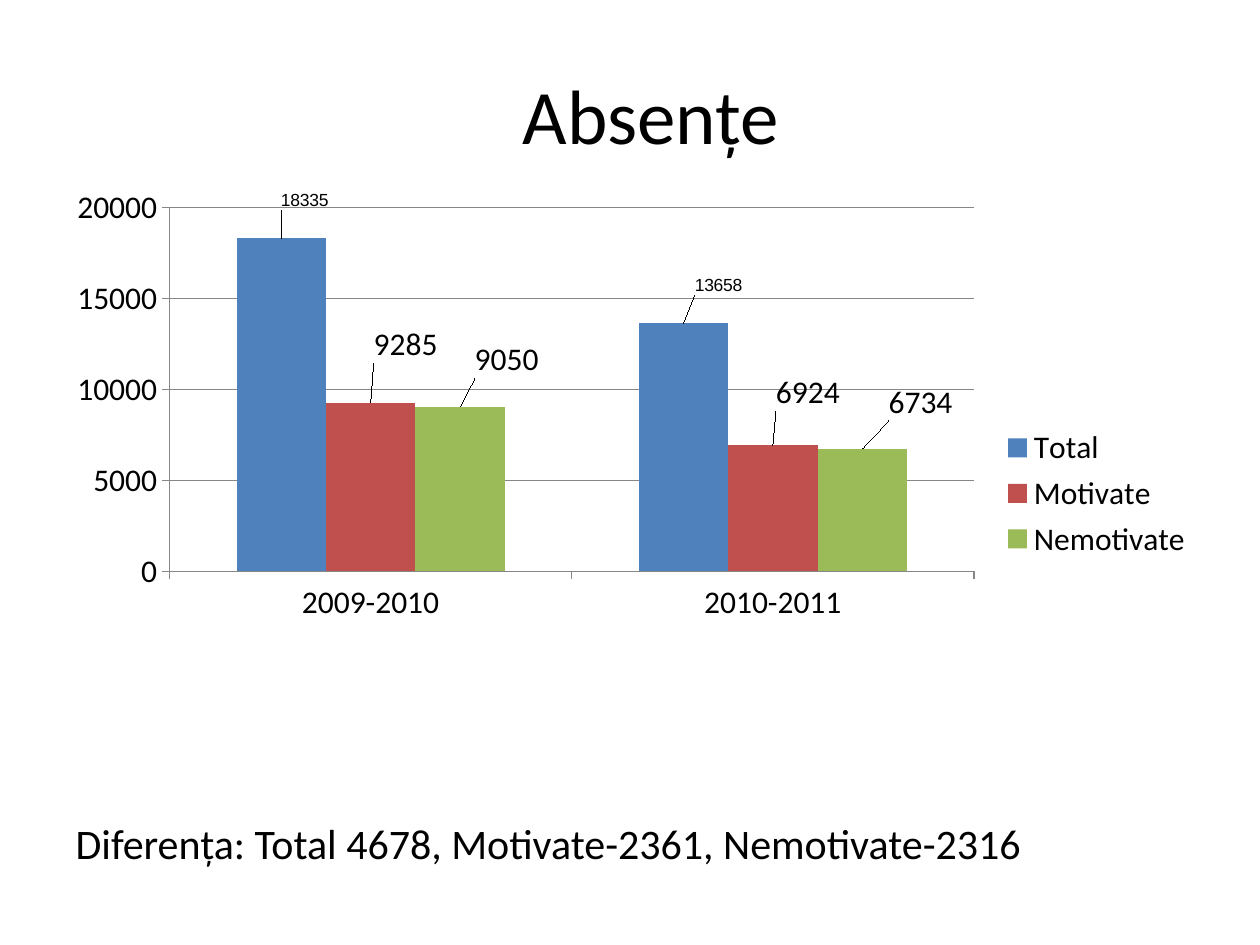
from lxml import etree
from pptx import Presentation
from pptx.chart.data import CategoryChartData
from pptx.dml.color import RGBColor
from pptx.enum.chart import (XL_CHART_TYPE as CT, XL_LABEL_POSITION as LP,
                             XL_LEGEND_POSITION as LEG, XL_TICK_MARK as TICK)
from pptx.enum.text import MSO_ANCHOR as ANCHOR, PP_ALIGN as ALIGN
from pptx.oxml.ns import qn
from pptx.util import Pt

COLORS = {"text": "000000", "line": "868686", "background": "FFFFFF",
          "Total": "4F81BD", "Motivate": "C0504D", "Nemotivate": "9BBB59"}
YEARS = ["2009-2010", "2010-2011"]
ABSENCES = {"Total": (18335, 13658), "Motivate": (9285, 6924), "Nemotivate": (9050, 6734)}
LABEL_FONTS = {"Total": (10, "Arial"), "Motivate": (18, "Calibri"), "Nemotivate": (18, "Calibri")}
LABEL_SHIFTS = [(0.02, -0.04), (0.03, -0.04),
                (0.03, -0.06), (0.03, -0.05),
                (0.04, -0.04), (0.05, -0.04)]


class Deck:
    """Holds the style and the current slide, and adds each kind of element."""

    SCALE = 914400 / 126
    FONT = "Calibri"

    def __init__(self, width, height):
        self.prs = Presentation()
        self.prs.slide_width, self.prs.slide_height = self.emu(width, height)
        self.s = self.prs.slides.add_slide(self.prs.slide_layouts[5])
        fill = self.s.background.fill
        fill.solid()
        fill.fore_color.rgb = self.color("background")

    def emu(self, *lengths):
        return [round(n * self.SCALE) for n in lengths]

    def color(self, name):
        return RGBColor.from_string(COLORS[name])

    def style(self, font, size, name=FONT):
        font.size, font.name = Pt(size), name
        font.color.rgb = self.color("text")

    def set_text(self, sp, text, size, align):
        tf = sp.text_frame
        tf.text = text
        tf.word_wrap = True
        tf.vertical_anchor = ANCHOR.MIDDLE
        p = tf.paragraphs[0]
        p.alignment = align
        self.style(p.runs[0].font, size)

    def title(self, box, text, size):
        sp = self.s.shapes.title
        sp.left, sp.top, sp.width, sp.height = self.emu(*box)
        self.set_text(sp, text, size, ALIGN.LEFT)

    def text(self, box, text, size):
        self.set_text(self.s.shapes.add_textbox(*self.emu(*box)), text, size, ALIGN.CENTER)

    def layout(self, parent, index, **values):
        for old in parent.findall(qn("c:layout")):
            parent.remove(old)
        layout = etree.Element(qn("c:layout"))
        manual = etree.SubElement(layout, qn("c:manualLayout"))
        for tag, value in values.items():
            etree.SubElement(manual, qn(f"c:{tag}")).set("val", str(value))
        parent.insert(index, layout)

    def axis(self, axis):
        axis.major_tick_mark, axis.minor_tick_mark = TICK.OUTSIDE, TICK.NONE
        self.line(axis.format.line)

    def line(self, line):
        line.color.rgb = self.color("line")
        line.width = Pt(0.75)

    def chart(self, box, categories, data):
        cd = CategoryChartData()
        cd.categories = categories
        for name, values in data.items():
            cd.add_series(name, values)
        chart = self.s.shapes.add_chart(CT.COLUMN_CLUSTERED, *self.emu(*box), cd).chart
        chart.has_title = False
        self.style(chart.font, 18)
        plot = chart.plots[0]
        plot.gap_width, plot.overlap, plot.vary_by_categories = 150, 0, False
        for series in plot.series:
            series.format.fill.solid()
            series.format.fill.fore_color.rgb = self.color(series.name)
            for i in range(len(categories)):
                label = series.points[i].data_label
                self.style(label.font, *LABEL_FONTS[series.name])
                label.position = LP.OUTSIDE_END
        for axis in (chart.category_axis, chart.value_axis):
            self.axis(axis)
        axis = chart.value_axis
        axis.minimum_scale, axis.maximum_scale, axis.major_unit = 0, 20000, 5000
        axis.has_major_gridlines = True
        self.line(axis.major_gridlines.format.line)
        chart.has_legend = True
        chart.legend.position = LEG.RIGHT
        chart.legend.include_in_layout = False
        for label, (x, y) in zip(chart.element.xpath(".//c:dLbl"), LABEL_SHIFTS):
            self.layout(label, 1, x=x, y=y)
        edges = {"xMode": "edge", "yMode": "edge"}
        self.layout(chart.element.xpath(".//c:plotArea")[0], 0, layoutTarget="inner",
                    **edges, x=0.1, y=0.05, w=0.69, h=0.63)
        self.layout(chart.element.xpath(".//c:legend")[0], 1,
                    **edges, x=0.81, y=0.42, w=0.17, h=0.25)


def main():
    deck = Deck(1260, 945)
    deck.title((63, 788, 1134, 110), "Diferența: Total 4678, Motivate-2361, Nemotivate-2316", 24)
    deck.chart((53, 179, 1166, 577), YEARS, ABSENCES)
    deck.text((84, 59, 1134, 110), "Absențe", 44)
    deck.prs.save("out.pptx")


if __name__ == "__main__":
    main()
